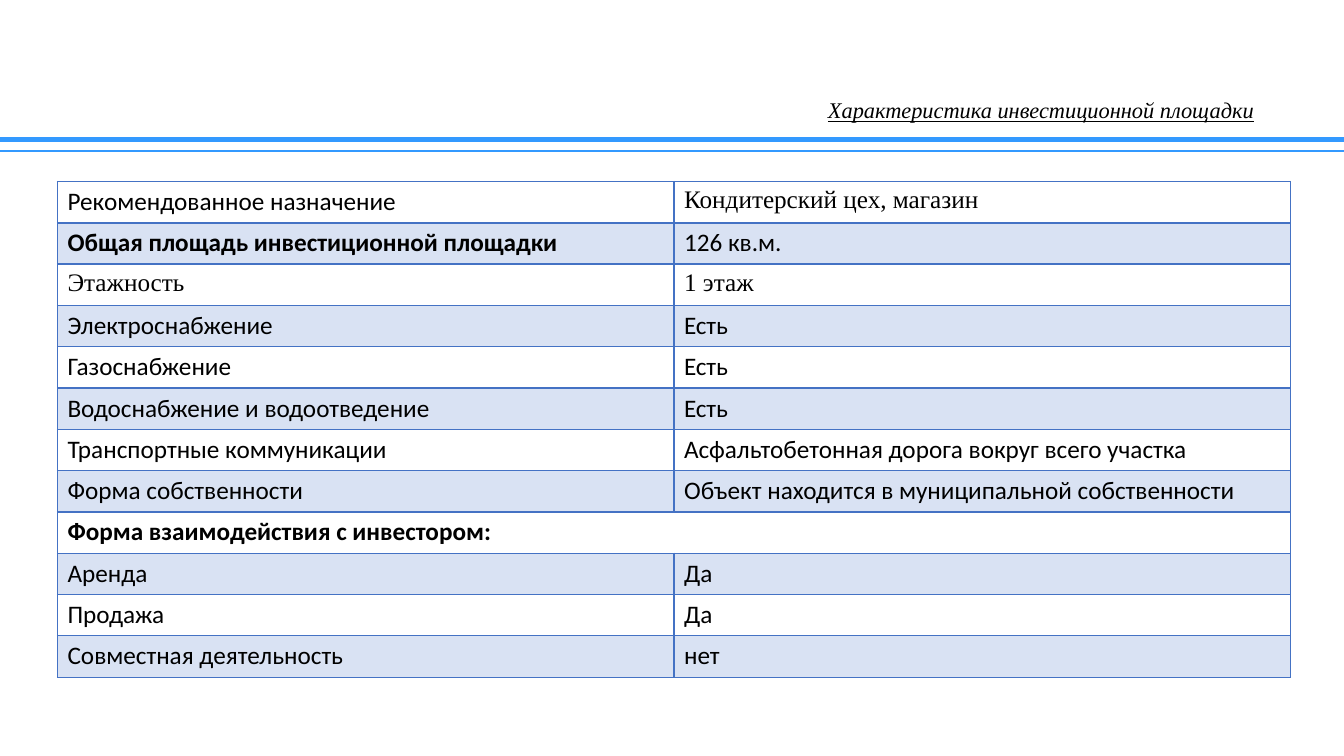
import lxml.etree
import pptx
import pptx.dml.color
import pptx.enum.shapes
import pptx.enum.text
import pptx.oxml.ns
import pptx.util

Inches, Pt = pptx.util.Inches, pptx.util.Pt
qn = pptx.oxml.ns.qn
SERIF, SANS = "Times New Roman", "Calibri"
BLUE, RULE, BLACK = "4472C4", "3399FF", "000000"

ROWS = [
    ("Рекомендованное назначение", "Кондитерский цех, магазин"),
    ("Общая площадь инвестиционной площадки", "126 кв.м."),
    ("Этажность", "1 этаж"),
    ("Электроснабжение", "Есть"),
    ("Газоснабжение", "Есть"),
    ("Водоснабжение и водоотведение", "Есть"),
    ("Транспортные коммуникации", "Асфальтобетонная дорога вокруг всего участка"),
    ("Форма собственности", "Объект находится в муниципальной собственности"),
    ("Форма взаимодействия с инвестором:",),
    ("Аренда", "Да"),
    ("Продажа", "Да"),
    ("Совместная деятельность", "нет"),
]
BOLD = {(1, 0), (8, 0)}
SERIFS = {(0, 1), (2, 0), (2, 1)}


def color(code):
    return pptx.dml.color.RGBColor.from_string(code)


def style(para, face, size):
    para.font.name = face
    para.font.size = Pt(size)
    para.font.color.rgb = color(BLACK)


def header(slide, left, top, width):
    """Place the title above two rules that span the width."""
    box = slide.shapes.add_textbox(
        Inches(left + 7.86), Inches(top), Inches(4.93), Inches(0.27))
    frame = box.text_frame
    frame.word_wrap = True
    frame.vertical_anchor = pptx.enum.text.MSO_ANCHOR.MIDDLE
    frame.margin_top = frame.margin_bottom = 0
    para = frame.paragraphs[0]
    para.text = "Характеристика инвестиционной площадки"
    para.alignment = pptx.enum.text.PP_ALIGN.CENTER
    para.line_spacing = 0.9
    style(para, SERIF, 16)
    para.font.italic = para.font.underline = True

    for drop, weight in ((0.41, 3.5), (0.53, 1.5)):
        y = Inches(top + drop)
        line = slide.shapes.add_connector(
            pptx.enum.shapes.MSO_CONNECTOR.STRAIGHT,
            Inches(left), y, Inches(left + width), y)
        line.line.color.rgb = color(RULE)
        line.line.width = Pt(weight)
        props = line._element.spPr
        lxml.etree.SubElement(props, qn("a:effectLst"))


def border(cell, row):
    """Edge the cell; the first row is closed by a double-weight line."""
    props = cell._tc.get_or_add_tcPr()
    for side in "LRTB":
        heavy = (row, side) in {(0, "B"), (1, "T")}
        edge = lxml.etree.SubElement(
            props, qn(f"a:ln{side}"), w=str(Pt(2 if heavy else 1)))
        fill = lxml.etree.SubElement(edge, qn("a:solidFill"))
        lxml.etree.SubElement(fill, qn("a:srgbClr"), val=BLUE)


def shade(cell, row):
    if row % 2 == 0:
        cell.fill.background()
        return
    cell.fill.solid()
    cell.fill.fore_color.rgb = color(BLUE)
    tint = cell._tc.tcPr.find(qn("a:solidFill")).find(qn("a:srgbClr"))
    lxml.etree.SubElement(tint, qn("a:alpha"), val="20000")


def facts(slide, left, top, width, height):
    """Fill the table of site facts; a one-item row spans both columns."""
    table = slide.shapes.add_table(
        len(ROWS), 2, Inches(left), Inches(top),
        Inches(width), Inches(height)).table
    table.first_row = table.horz_banding = False
    for r, texts in enumerate(ROWS):
        for c in range(2):
            border(table.cell(r, c), r)
            shade(table.cell(r, c), r)
        if len(texts) == 1:
            table.cell(r, 0).merge(table.cell(r, 1))
        for c, text in enumerate(texts):
            para = table.cell(r, c).text_frame.paragraphs[0]
            para.text = text
            style(para, SERIF if (r, c) in SERIFS else SANS, 18)
            para.font.bold = (r, c) in BOLD


def main():
    deck = pptx.Presentation()
    deck.slide_width, deck.slide_height = Inches(13.33), Inches(7.5)
    slide = deck.slides.add_slide(deck.slide_layouts[6])
    header(slide, 0, 0.97, 13.33)
    facts(slide, 0.57, 1.8, 12.23, 4.92)
    deck.save("out.pptx")


if __name__ == "__main__":
    main()
